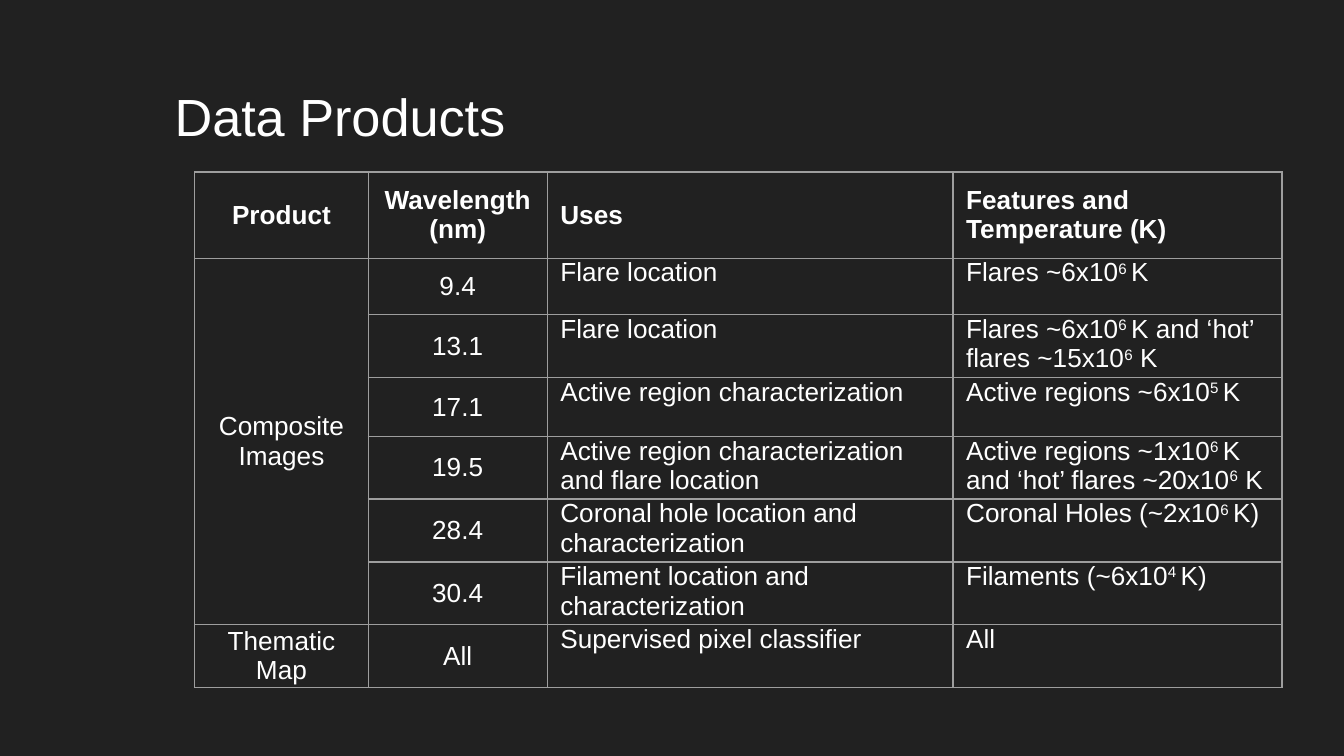
from lxml import etree
from pptx import Presentation
from pptx import util as u
from pptx.dml.color import RGBColor
from pptx.enum import text
from pptx.oxml import ns

BACKGROUND = RGBColor(0x21, 0x21, 0x21)
WHITE = RGBColor(0xFF, 0xFF, 0xFF)
GRID = RGBColor(0x9E, 0x9E, 0x9E)

# Powers of ten stand between carets
HEADER = ["Product", "Wavelength\n(nm)", "Uses", "Features and Temperature (K)"]
ROWS = [
    ["Composite Images", "9.4", "Flare location", "Flares ~6x10^6 ^K"],
    ["", "13.1", "Flare location",
     "Flares ~6x10^6 ^K and ‘hot’ flares ~15x10^6^ K"],
    ["", "17.1", "Active region characterization", "Active regions ~6x10^5 ^K"],
    ["", "19.5", "Active region characterization and flare location",
     "Active regions ~1x10^6 ^K and ‘hot’ flares ~20x10^6^ K"],
    ["", "28.4", "Coronal hole location and characterization",
     "Coronal Holes (~2x10^6 ^K)"],
    ["", "30.4", "Filament location and characterization",
     "Filaments (~6x10^4 ^K)"],
    ["Thematic Map", "All", "Supervised pixel classifier", "All"],
]
COLUMN_WIDTHS = [3.28, 3.38, 7.67, 6.22]
ROW_HEIGHTS = [1.63, 1.07] + [1.11] * 6


def write(para, words, size, bold=False):
    """Add runs to a paragraph, raising the pieces between carets."""
    style = {"name": "Arial", "size": u.Pt(size), "bold": bold}
    for index, piece in enumerate(words.split("^")):
        if not piece:
            continue
        span = para.add_run()
        span.text = piece
        for key, value in style.items():
            setattr(span.font, key, value)
        span.font.color.rgb = WHITE
        if index % 2:
            span.font._element.set("baseline", "30000")


def add_borders(cell):
    """Draw the thin grid line on all four sides of a cell."""
    properties = cell._tc.get_or_add_tcPr()
    for index, side in enumerate(["lnL", "lnR", "lnT", "lnB"]):
        line = etree.Element(ns.qn("a:" + side), w=str(u.Pt(0.75)))
        fill = etree.SubElement(line, ns.qn("a:solidFill"))
        etree.SubElement(fill, ns.qn("a:srgbClr"), val=str(GRID))
        properties.insert(index, line)


# Page
deck = Presentation()
deck.slide_width, deck.slide_height = u.Cm(25.4), u.Cm(14.29)
page = deck.slides.add_slide(deck.slide_layouts[6])
page.background.fill.solid()
page.background.fill.fore_color.rgb = BACKGROUND

# Title
box = page.shapes.add_textbox(u.Cm(3.05), u.Cm(1.24), u.Cm(21.49), u.Cm(1.6))
frame_format = {
    "word_wrap": True,
    "vertical_anchor": text.MSO_ANCHOR.TOP,
    "margin_left": u.Cm(0.25),
    "margin_right": u.Cm(0.25),
    "margin_top": u.Cm(0.35),
    "margin_bottom": u.Cm(0),
}
for key, value in frame_format.items():
    setattr(box.text_frame, key, value)
write(box.text_frame.paragraphs[0], "Data Products", 28)

# Table grid
table = page.shapes.add_table(
    len(ROW_HEIGHTS), len(COLUMN_WIDTHS), u.Cm(3.68), u.Cm(3.25),
    u.Cm(sum(COLUMN_WIDTHS)), u.Cm(sum(ROW_HEIGHTS))).table
table.first_row = table.horz_banding = False
for column, width in zip(table.columns, COLUMN_WIDTHS):
    column.width = u.Cm(width)
for row, height in zip(table.rows, ROW_HEIGHTS):
    row.height = u.Cm(height)
table.cell(1, 0).merge(table.cell(6, 0))

# Table cells: header and first two columns sit in the middle
for row_index, row in enumerate([HEADER] + ROWS):
    for column_index, words in enumerate(row):
        cell = table.cell(row_index, column_index)
        is_header, is_key = row_index == 0, column_index < 2
        middle = is_header or is_key
        cell_format = {
            "margin_left": u.Cm(0.25),
            "margin_right": u.Cm(0.25),
            "margin_top": 0,
            "margin_bottom": 0,
            "vertical_anchor":
                text.MSO_ANCHOR.MIDDLE if middle else text.MSO_ANCHOR.TOP,
        }
        for key, value in cell_format.items():
            setattr(cell, key, value)
        cell.fill.background()
        add_borders(cell)
        for index, line in enumerate(words.split("\n")):
            frame = cell.text_frame
            para = frame.add_paragraph() if index else frame.paragraphs[0]
            para.alignment = text.PP_ALIGN.CENTER if is_key else text.PP_ALIGN.LEFT
            write(para, line, 14, bold=is_header)

deck.save("out.pptx")
